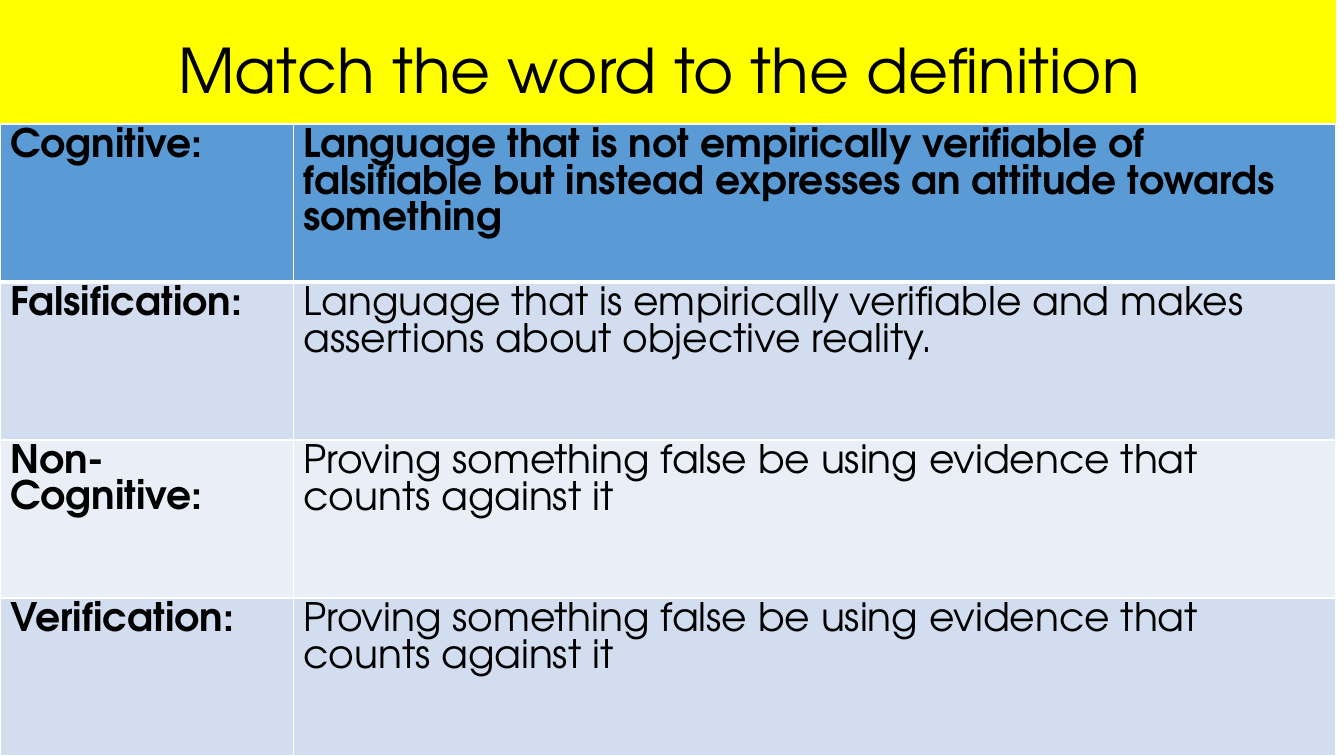
import pptx
import pptx.util
import pptx.dml.color
import pptx.enum.shapes
import pptx.enum.text
from lxml import etree
from pptx.util import Inches, Pt

FONT = "TeX Gyre Adventor"
HEX = {
    "title": "FFFF00",
    "head": "5B9BD5",
    "odd": "D2DEEF",
    "even": "EAEFF7",
    "line": "FFFFFF",
    "text": "000000",
}
WIDTH = 13.25
COLS = [2.91, 10.34]
HIGH = 6.27
PROOF = "Proving something false be using evidence that counts against it"
ROWS = [
    ("Cognitive:", "Language that is not empirically verifiable of falsifiable "
     "but instead expresses an attitude towards something"),
    ("Falsification:", "Language that is empirically verifiable and makes "
     "assertions about objective reality."),
    ("Non-Cognitive:", PROOF),
    ("Verification:", PROOF),
]


def paint(fill, name):
    fill.solid()
    fill.fore_color.rgb = pptx.dml.color.RGBColor.from_string(HEX[name])


def style(para, size, bold=False):
    for run in para.runs:
        run.font.name = FONT
        run.font.size = Pt(size)
        run.font.bold = bold
        paint(run.font.fill, "text")


def add_title(slide, text):
    box = slide.shapes.add_shape(
        pptx.enum.shapes.MSO_SHAPE.RECTANGLE, 0, 0, Inches(WIDTH), Inches(1.45))
    box.shadow.inherit = False
    paint(box.fill, "title")
    box.line.fill.background()
    frame = box.text_frame
    frame.word_wrap = True
    frame.vertical_anchor = pptx.enum.text.MSO_ANCHOR.MIDDLE
    frame.text = text
    para = frame.paragraphs[0]
    para.alignment = pptx.enum.text.PP_ALIGN.CENTER
    para.line_spacing = 0.9
    style(para, 44)


def add_edges(cell, base):
    props = cell._tc.get_or_add_tcPr()
    space = pptx.oxml.ns.nsdecls("a")
    widths = {"lnL": 1, "lnR": 1, "lnT": 1, "lnB": base}
    for spot, (tag, width) in enumerate(widths.items()):
        edge = etree.fromstring(
            f'<a:{tag} {space} w="{Pt(width)}"><a:solidFill>'
            f'<a:srgbClr val="{HEX["line"]}"/></a:solidFill></a:{tag}>')
        props.insert(spot, edge)


def add_grid(slide, rows):
    grid = slide.shapes.add_table(
        len(rows), len(COLS), 0, Inches(1.23), Inches(WIDTH), Inches(HIGH)).table
    for col, width in zip(grid.columns, COLS):
        col.width = Inches(width)
    for r, row in enumerate(rows):
        grid.rows[r].height = Inches(HIGH / len(rows))
        shade = "head" if r == 0 else "odd" if r % 2 else "even"
        for c, text in enumerate(row):
            cell = grid.cell(r, c)
            cell.text_frame.text = text
            style(cell.text_frame.paragraphs[0], 28, r == 0 or c == 0)
            paint(cell.fill, shade)
            add_edges(cell, 3 if r == 0 else 1)
    for c in range(len(COLS)):
        top = grid.cell(1, c)._tc.tcPr.find(pptx.oxml.ns.qn("a:lnT"))
        top.set("w", str(Pt(3)))


def main():
    deck = pptx.Presentation()
    deck.slide_width = Inches(13.33)
    deck.slide_height = Inches(7.5)
    slide = deck.slides.add_slide(deck.slide_layouts[6])
    add_title(slide, "Match the word to the definition ")
    add_grid(slide, ROWS)
    deck.save("out.pptx")


if __name__ == "__main__":
    main()
